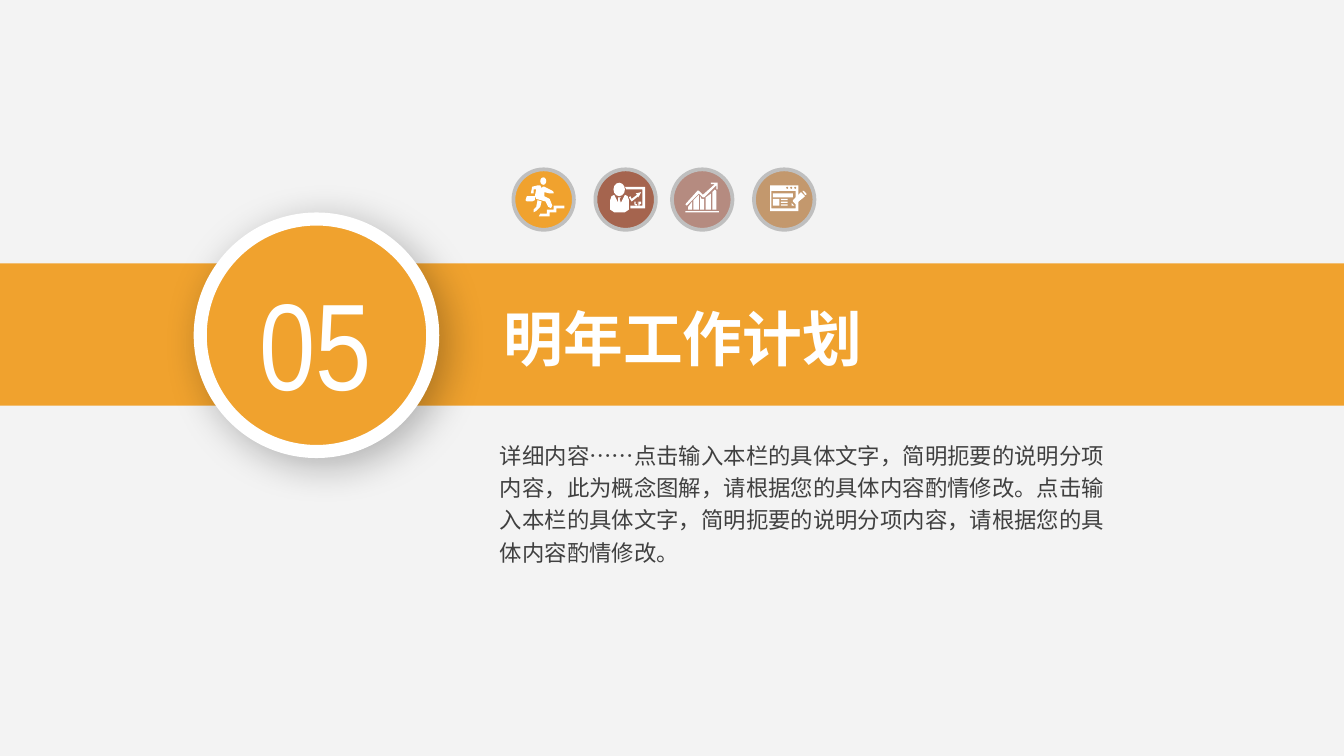
from lxml.etree import SubElement
from pptx import Presentation
from pptx.dml.color import RGBColor
from pptx.enum.shapes import MSO_SHAPE
from pptx.enum.text import PP_ALIGN
from pptx.oxml.ns import qn
from pptx.util import Inches, Pt

ORANGE = RGBColor(0xF0, 0xA2, 0x2E)
BROWN = RGBColor(0xA5, 0x64, 0x4E)
ROSE = RGBColor(0xB5, 0x8B, 0x80)
TAN = RGBColor(0xC3, 0x98, 0x6D)
WHITE = RGBColor(0xFF, 0xFF, 0xFF)
RING = RGBColor(0xBF, 0xBF, 0xBF)
PAPER = RGBColor(0xF3, 0xF3, 0xF3)
INK = RGBColor(0x40, 0x40, 0x40)
SANS = "Noto Sans CJK SC"
WIDE = 10

# Content
TITLE = "明年工作计划"
BODY = ("详细内容……点击输入本栏的具体文字，简明扼要的说明分项内容，"
        "此为概念图解，请根据您的具体内容酌情修改。点击输入本栏的具体文字，"
        "简明扼要的说明分项内容，请根据您的具体内容酌情修改。")
NUMBER = "05"

# Icon parts, in hundredths of an inch from the badge corner:
# "poly" holds outlines, "oval", "rect" and "dot" hold left, top, width, height
RUNNER = [
    ("poly", [[(20, 33), (25, 33), (25, 30), (30, 30), (30, 27), (38, 27),
               (38, 29), (32, 29), (32, 32), (27, 32), (27, 35), (19, 35)]]),
    ("poly", [[(10, 24), (14, 24), (16, 23), (16, 20), (10, 20), (9, 23)],
              [(15, 30), (17, 28), (18, 23), (21, 24), (20, 28), (17, 31), (15, 32)],
              [(22, 13), (23, 13), (29, 16), (30, 17), (30, 18), (27, 18.5),
               (23, 17), (23, 20), (27, 22), (29, 27), (28, 29), (26, 28),
               (24, 24), (17, 22), (16, 20), (17, 15), (15, 15), (15, 18),
               (13, 18), (14, 13), (18, 12), (20, 12), (21, 14)]]),
    ("oval", (20, 6, 4.5, 5.5)),
]
SPEAKER = [
    ("poly", [[(22, 13), (23, 15), (35, 15), (35, 27), (26, 27), (26, 29),
               (37, 29), (37, 13)]]),
    ("oval", (13.5, 10, 8.5, 10)),
    ("poly", [[(26, 20), (25, 21), (27, 24), (32, 20), (32, 21), (34, 17),
               (30, 18), (31, 19), (27, 22)]]),
    ("poly", [[(22, 19), (19, 25), (18, 22), (19, 21), (17, 21), (17, 22),
               (17, 25), (14, 19), (12, 20), (11, 23), (11, 30), (14, 31.5),
               (18, 32), (22, 31.5), (25, 30), (25, 23), (24, 20)]]),
    ("poly", [[(29, 24), (29, 26), (29.7, 26.6), (30.7, 26.6), (31.4, 26),
               (31.4, 24), (30.7, 24), (30.7, 26), (29.7, 26), (29.7, 24)]]),
    ("poly", [[(32, 24), (34, 24), (34, 25.6), (32.7, 25.6), (32.7, 26.6),
               (32, 26.6)]]),
]
GROWTH = [
    ("rect", (10, 31, 25, 1)),
    ("poly", [[(12, 30), (15, 30), (15, 24), (12, 28)]]),
    ("poly", [[(16, 30), (20, 30), (20, 19), (16, 23)]]),
    ("poly", [[(21, 30), (24, 30), (24, 22), (22, 22), (21, 20)]]),
    ("poly", [[(25, 30), (29, 30), (29, 18), (25, 21)]]),
    ("poly", [[(30, 30), (33, 30), (33, 16), (32, 15), (30, 17)]]),
    ("poly", [[(11, 27), (20, 18), (23, 21), (24, 21), (33, 12), (33, 15),
               (34, 15), (34, 10), (29, 10), (29, 11), (32, 11), (23, 19),
               (20, 16), (19, 16), (10, 26)]]),
]
FORM = [
    ("poly", [[(12, 12), (33, 12), (33, 31), (12, 31)],
              [(13, 16), (13, 29), (31, 29), (31, 16)]]),
    *[("dot", (x, 13, 1.5, 1.5)) for x in (24, 27, 30)],
    ("rect", (14, 18, 15, 3)),
    ("rect", (14, 22, 5, 5)),
    *[("rect", (20, y, 5, 1)) for y in (22, 24, 26)],
    ("poly", [[(28, 25), (28, 27), (30, 27)]]),
    ("poly", [[(38, 19), (39, 19), (39, 18), (37, 16), (36, 16)]]),
    ("poly", [[(35, 17), (29, 23), (29, 24), (31, 26), (32, 25), (38, 20)]]),
]
BADGES = [(3.82, ORANGE, RUNNER), (4.43, BROWN, SPEAKER),
          (5, ROSE, GROWTH), (5.61, TAN, FORM)]
TOP, SIZE = 1.26, 0.45


def paint(shape, fill, line=None, width=0):
    shape.shadow.inherit = False
    shape.fill.solid()
    shape.fill.fore_color.rgb = fill
    if line is None:
        shape.line.fill.background()
    else:
        shape.line.color.rgb = line
        shape.line.width = Pt(width)
    return shape


def add_form(shapes, kind, box, fill, **edge):
    return paint(shapes.add_shape(kind, *map(Inches, box)), fill, **edge)


def add_text(shapes, text, box, size, color, font=SANS, bold=False,
             align=PP_ALIGN.LEFT, pad=(0.07, 0.04), space=1.0):
    frame = shapes.add_textbox(*map(Inches, box)).text_frame
    frame.word_wrap = True
    frame.margin_left = frame.margin_right = Inches(pad[0])
    frame.margin_top = frame.margin_bottom = Inches(pad[1])
    para = frame.paragraphs[0]
    para.alignment, para.line_spacing = align, space
    run = para.add_run()
    run.text = text
    run.font.size, run.font.bold, run.font.name = Pt(size), bold, font
    run.font.color.rgb = color
    SubElement(run.font._element, qn("a:ea"), typeface=font)


def add_poly(shapes, loops, left, top):
    pen = None
    for first, *rest in loops:
        if pen is None:
            pen = shapes.build_freeform(*first, scale=Inches(0.01))
        else:
            pen.move_to(*first)
        pen.add_line_segments(rest, close=True)
    paint(pen.convert_to_shape(Inches(left), Inches(top)), WHITE)


def add_badge(slide, left, color, parts):
    shapes = slide.shapes.add_group_shape().shapes
    add_form(shapes, MSO_SHAPE.OVAL, (left, TOP, SIZE, SIZE), color, line=RING, width=2)
    for kind, data in parts:
        if kind == "poly":
            add_poly(shapes, data, left, TOP)
            continue
        x, y, w, h = (n / 100 for n in data)
        form = MSO_SHAPE.RECTANGLE if kind == "rect" else MSO_SHAPE.OVAL
        add_form(shapes, form, (left + x, TOP + y, w, h),
                 color if kind == "dot" else WHITE)


def add_shadow(shape, blur, dist, angle, alpha):
    effects = shape._element.spPr.find(qn("a:effectLst"))
    outer = SubElement(effects, qn("a:outerShdw"), blurRad=str(Pt(blur)),
                       dist=str(Pt(dist)), dir=str(angle * 60000),
                       algn="ctr", rotWithShape="0")
    tint = SubElement(outer, qn("a:srgbClr"), val="000000")
    SubElement(tint, qn("a:alpha"), val=str(alpha * 1000))


def main():
    deck = Presentation()
    deck.slide_width = Inches(WIDE)
    deck.slide_height = Inches(WIDE * 9 / 16)
    slide = deck.slides.add_slide(deck.slide_layouts[6])
    slide.background.fill.solid()
    slide.background.fill.fore_color.rgb = PAPER

    # Band and wording
    add_form(slide.shapes, MSO_SHAPE.RECTANGLE, (0, 1.96, WIDE, 1.06), ORANGE)
    add_text(slide.shapes, TITLE, (3.65, 2.2, 3.54, 0.64), 32, WHITE,
             bold=True, pad=(0.1, 0.05))
    add_text(slide.shapes, BODY, (3.65, 3.21, 4.66, 1.05), 12, INK, space=1.2)

    # Icon badges
    for left, color, parts in BADGES:
        add_badge(slide, left, color, parts)

    # Number disc
    shapes = slide.shapes.add_group_shape().shapes
    disc = add_form(shapes, MSO_SHAPE.OVAL, (1.49, 1.63, 1.73, 1.73), ORANGE,
                    line=WHITE, width=7)
    add_shadow(disc, blur=22, dist=6, angle=45, alpha=28)
    add_text(shapes, NUMBER, (1.69, 1.95, 1.31, 1.19), 66, WHITE,
             font="Arial Narrow", align=PP_ALIGN.CENTER)

    deck.save("out.pptx")


if __name__ == "__main__":
    main()
